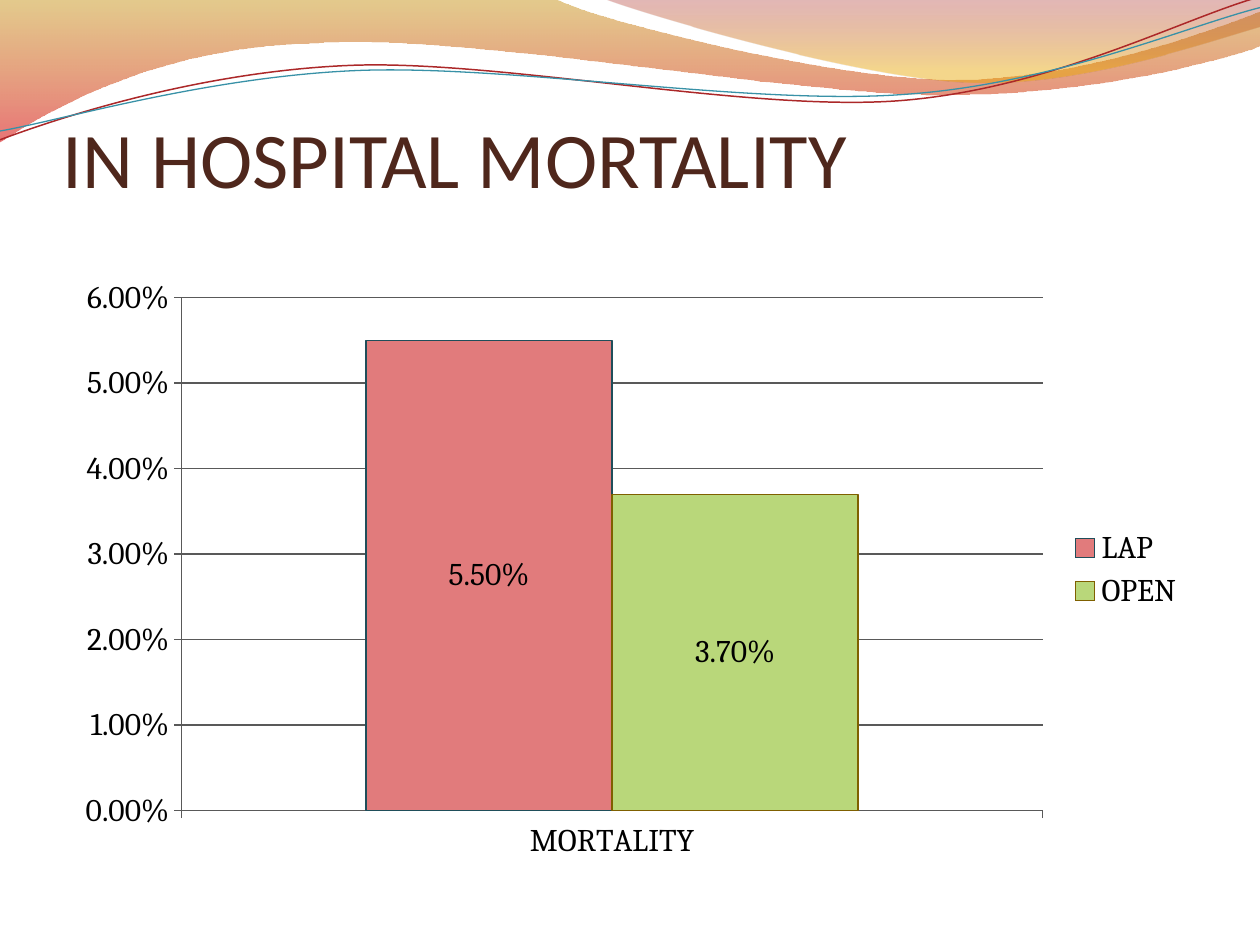
"""Build the in-hospital mortality slide with its wave banner and column chart."""
from dataclasses import dataclass
from math import cos, radians, sin

from lxml import etree
from pptx import Presentation
from pptx import util as u
from pptx.chart.data import CategoryChartData
from pptx.dml.color import RGBColor
from pptx.enum import chart as ch
from pptx.enum import text as t
from pptx.oxml.ns import qn

PERCENT = "0.00%"
GRID_COLOUR = "595959"


@dataclass(frozen=True)
class Stop:
    position: float
    colour: str
    opacity: int


@dataclass(frozen=True)
class Wave:
    frame: tuple[float, float, float, float]
    start: tuple[float, float]
    segments: tuple[tuple[float, ...], ...]
    stops: tuple[Stop, ...] = ()
    line_colour: str = ""
    line_width: float = 0
    rotation: float = 0


@dataclass(frozen=True)
class Group:
    name: str
    mortality: float
    fill: str
    outline: str


WAVES = (
    Wave((-0.01, -0.01, 10.02, 1.14), (0, 0), (
        (4.4, -0.01),
        (4.76, 0.17, 6.64, 0.63, 7.58, 0.63),
        (8.53, 0.63, 9.58, 0.26, 10, 0.09),
        (10.01, 0.36),
        (9.83, 0.44, 8.7, 0.76, 7.46, 0.75),
        (6.22, 0.75, 3.82, 0.28, 2.57, 0.34),
        (1.29, 0.36, 0.46, 0.83, -0.01, 1.13),
        (0, 0),
    ), stops=(Stop(0, "C38B00", 45), Stop(1, "D60305", 55))),
    Wave((4.79, -0.01, 5.21, 0.7), (4.79, -0.01), (
        (5.09, 0.11, 6.82, 0.62, 7.69, 0.65),
        (8.56, 0.69, 9.61, 0.32, 10, 0.21),
        (10, 0),
        (4.79, -0.01),
    ), stops=(Stop(0, "A11112", 30), Stop(0.8, "E9A600", 45))),
    Wave((-0.02, 0.22, 10.02, 0.71), (0, 1.11), (
        (0.48, 0.93, 1.58, 0.57, 2.77, 0.52),
        (3.95, 0.47, 5.93, 0.89, 7.13, 0.8),
        (8.33, 0.71, 9.38, 0.15, 9.98, -0.02),
    ), line_colour="AC2829", line_width=0.85, rotation=357.3),
    Wave((-0.02, 0.3, 10.03, 0.58), (0, 1.04), (
        (0.47, 0.96, 1.64, 0.61, 2.83, 0.56),
        (4.03, 0.51, 5.97, 0.84, 7.17, 0.75),
        (8.36, 0.67, 9.41, 0.21, 10, 0.06),
    ), line_colour="3891A7", line_width=0.75, rotation=357.3),
)

GROUPS = (
    Group("LAP", 0.055, "E17B7C", "1F4E5A"),
    Group("OPEN", 0.037, "B9D77A", "7F6000"),
)


def colour(value: str) -> RGBColor:
    return RGBColor.from_string(value)


def to_frame(wave: Wave, x: float, y: float) -> tuple[int, int]:
    """Turn a slide position into a position inside the wave's unrotated frame."""
    left, top, width, height = wave.frame
    dx, dy = x - left - width / 2, y - top - height / 2
    angle = radians(-wave.rotation)
    return (u.Inches(width / 2 + dx * cos(angle) - dy * sin(angle)),
            u.Inches(height / 2 + dx * sin(angle) + dy * cos(angle)))


def add_command(outline, wave: Wave, tag: str, numbers: tuple[float, ...]) -> None:
    command = etree.SubElement(outline, qn(tag))
    for x, y in zip(numbers[::2], numbers[1::2]):
        across, down = to_frame(wave, x, y)
        etree.SubElement(command, qn("a:pt"), x=str(across), y=str(down))


def draw_wave(slide, wave: Wave) -> None:
    """Draw a wave as true cubic curves, filled when it has gradient stops."""
    left, top, width, height = map(u.Inches, wave.frame)
    builder = slide.shapes.build_freeform(left, top)
    builder.add_line_segments([(left + width, top + height)], close=False)
    ribbon = builder.convert_to_shape()
    ribbon.left, ribbon.top, ribbon.width, ribbon.height = left, top, width, height
    ribbon.rotation = wave.rotation
    ribbon.shadow.inherit = False

    outline = next(ribbon._element.spPr.iter(qn("a:path")))
    for command in list(outline):
        outline.remove(command)
    outline.set("w", str(width))
    outline.set("h", str(height))
    add_command(outline, wave, "a:moveTo", wave.start)
    for segment in wave.segments:
        tag = "a:lnTo" if len(segment) == 2 else "a:cubicBezTo"
        add_command(outline, wave, tag, segment)

    if not wave.stops:
        ribbon.fill.background()
        ribbon.line.color.rgb = colour(wave.line_colour)
        ribbon.line.width = u.Pt(wave.line_width)
        return
    etree.SubElement(outline, qn("a:close"))
    ribbon.line.fill.background()
    ribbon.fill.gradient()
    ribbon.fill.gradient_angle = 270
    for target, stop in zip(ribbon.fill.gradient_stops, wave.stops):
        target.position = stop.position
        target.color.rgb = colour(stop.colour)
    tints = ribbon._element.spPr.iter(qn("a:srgbClr"))
    for tint, stop in zip(tints, wave.stops):
        etree.SubElement(tint, qn("a:alpha"), val=str(stop.opacity * 1000))


def add_text(slide, wording: str, *, left: float, top: float, width: float,
             height: float, size: float, font: str, ink: str) -> None:
    box = slide.shapes.add_textbox(*map(u.Inches, (left, top, width, height)))
    frame = box.text_frame
    frame.word_wrap = True
    frame.vertical_anchor = t.MSO_ANCHOR.BOTTOM
    frame.margin_left = frame.margin_right = frame.margin_bottom = 0
    run = frame.paragraphs[0].add_run()
    run.text = wording
    run.font.size = u.Pt(size)
    run.font.name = font
    run.font.color.rgb = colour(ink)


def draw_chart(slide, groups: tuple[Group, ...]) -> None:
    figures = CategoryChartData(number_format=PERCENT)
    figures.categories = ["MORTALITY"]
    for group in groups:
        figures.add_series(group.name, [group.mortality])
    chart = slide.shapes.add_chart(
        ch.XL_CHART_TYPE.COLUMN_CLUSTERED,
        *map(u.Inches, (0.5, 2.12, 9, 4.8)), figures).chart
    chart.has_title = False
    chart.font.size = u.Pt(18)
    chart.font.name = "Cambria"
    chart.font.color.rgb = colour("000000")
    chart.has_legend = True
    chart.legend.position = ch.XL_LEGEND_POSITION.RIGHT
    chart.legend.include_in_layout = False

    rates = chart.value_axis
    rates.tick_labels.number_format = PERCENT
    rates.tick_labels.number_format_is_linked = False
    rates.has_major_gridlines = True
    for axis in (rates, chart.category_axis):
        axis.major_tick_mark = ch.XL_TICK_MARK.OUTSIDE
    for edge in (rates, chart.category_axis, rates.major_gridlines):
        edge.format.line.color.rgb = colour(GRID_COLOUR)
        edge.format.line.width = u.Pt(0.75)

    plot = chart.plots[0]
    plot.gap_width, plot.overlap = 150, 0
    plot.vary_by_categories = False
    for column, group in zip(plot.series, groups):
        column.format.fill.solid()
        column.format.fill.fore_color.rgb = colour(group.fill)
        column.format.line.color.rgb = colour(group.outline)
        column.format.line.width = u.Pt(0.75)
        labels = column.data_labels
        labels.show_value = True
        labels.number_format = PERCENT
        labels.number_format_is_linked = False
        labels.position = ch.XL_LABEL_POSITION.CENTER


def main() -> None:
    deck = Presentation()
    deck.slide_width, deck.slide_height = u.Inches(10), u.Inches(7.5)
    slide = deck.slides.add_slide(deck.slide_layouts[6])
    for wave in WAVES:
        draw_wave(slide, wave)
    add_text(slide, "IN HOSPITAL MORTALITY", left=0.5, top=0.77, width=9,
             height=0.85, size=45, font="Calibri", ink="4F271C")
    draw_chart(slide, GROUPS)
    deck.save("out.pptx")


if __name__ == "__main__":
    main()
